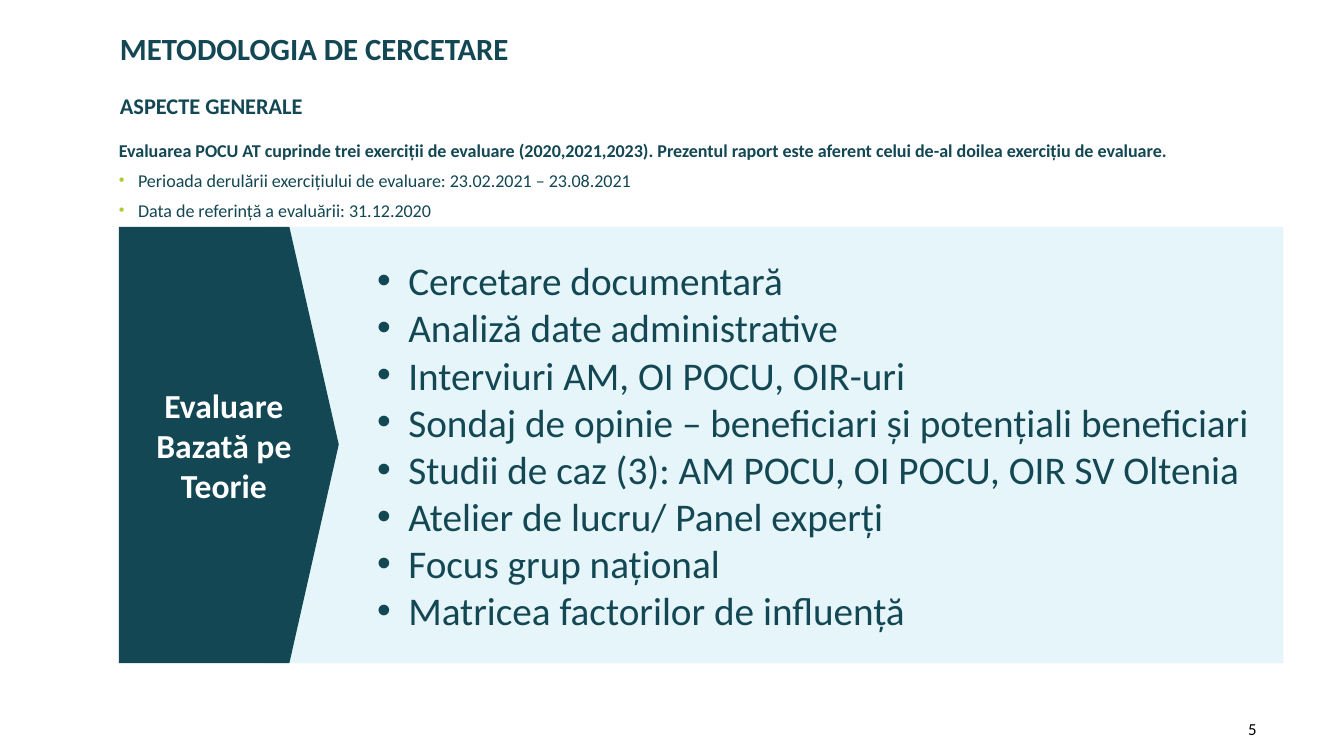
from lxml.etree import SubElement
from pptx import Presentation
from pptx.dml.color import RGBColor
from pptx.enum.shapes import MSO_SHAPE
from pptx.enum.text import MSO_ANCHOR, PP_ALIGN
from pptx.oxml.ns import qn
from pptx.util import Emu, Pt

PX = 9144  # EMU per px, 100 px to the inch
FONT = "Calibri"
TEAL = RGBColor(0x13, 0x47, 0x53)
LIME = RGBColor(0xAB, 0xCD, 0x3A)
PALE = RGBColor(0xDA, 0xF1, 0xF7)
WHITE = RGBColor(0xFF, 0xFF, 0xFF)
BLACK = RGBColor(0x00, 0x00, 0x00)

LEAD = ("Evaluarea POCU AT cuprinde trei exerciții de evaluare (2020,2021,2023). "
        "Prezentul raport este aferent celui de-al doilea exercițiu de evaluare.")
DATES = [
    "Perioada derulării exercițiului de evaluare: 23.02.2021 – 23.08.2021",
    "Data de referință a evaluării: 31.12.2020",
]
TOOLS = [
    "Cercetare documentară",
    "Analiză date administrative",
    "Interviuri AM, OI POCU, OIR-uri",
    "Sondaj de opinie – beneficiari și potențiali beneficiari",
    "Studii de caz (3): AM POCU, OI POCU, OIR SV Oltenia",
    "Atelier de lucru/ Panel experți",
    "Focus grup național",
    "Matricea factorilor de influență",
]


def px(n):
    return Emu(n * PX)


def set_frame(shape, pads, anchor=MSO_ANCHOR.TOP):
    frame = shape.text_frame
    frame.word_wrap = True
    frame.vertical_anchor = anchor
    (frame.margin_left, frame.margin_top,
     frame.margin_right, frame.margin_bottom) = map(px, pads)
    return frame


def add_box(slide, place, pads=(0, 0, 0, 0), anchor=MSO_ANCHOR.TOP):
    return set_frame(slide.shapes.add_textbox(*map(px, place)), pads, anchor)


def add_para(frame, first, align=PP_ALIGN.LEFT, gap=0):
    para = frame.paragraphs[0] if first else frame.add_paragraph()
    para.alignment = align
    para.space_before = Pt(0 if first else gap)
    para.space_after = Pt(gap)
    return para


def add_run(para, text, size, color=TEAL, bold=False):
    run = para.add_run()
    run.text = text
    font = run.font
    font.name, font.size, font.bold = FONT, Pt(size), bold
    font.color.rgb = color


def add_dot(para, left, hang, color=TEAL, scale=100):
    props = para._p.get_or_add_pPr()
    props.set("marL", str(px(left)))
    props.set("indent", str(px(-hang)))
    tint = SubElement(props, qn("a:buClr"))
    SubElement(tint, qn("a:srgbClr"), val=str(color))
    SubElement(props, qn("a:buSzPct"), val=str(scale * 1000))
    SubElement(props, qn("a:buFont"), typeface="Arial")
    SubElement(props, qn("a:buChar"), char="•")


def paint(shape, color, alpha=None):
    shape.shadow.inherit = False
    shape.line.fill.background()
    shape.fill.solid()
    shape.fill.fore_color.rgb = color
    if alpha:
        tint = shape.fill._xPr.find(qn("a:solidFill"))[0]
        SubElement(tint, qn("a:alpha"), val=str(alpha * 1000))


def add_heads(slide):
    title = add_para(add_box(slide, (119, 29, 1122, 63), (0, 5, 10, 5)), True)
    title.line_spacing = 0.9
    add_run(title, "METODOLOGIA DE CERCETARE", 22, bold=True)
    sub = add_para(add_box(slide, (119, 91, 413, 27)), True, gap=3)
    add_run(sub, "ASPECTE GENERALE", 16, bold=True)


def add_intro(slide):
    frame = add_box(slide, (118, 138, 1123, 87))
    add_run(add_para(frame, True, PP_ALIGN.JUSTIFY, 3), LEAD, 12.9, bold=True)
    for text in DATES:
        para = add_para(frame, False, PP_ALIGN.JUSTIFY, 3)
        add_dot(para, 19, 19, LIME, 90)
        add_run(para, text, 12.9)


def add_panel(slide):
    panel = slide.shapes.add_shape(MSO_SHAPE.RECTANGLE, *map(px, (265, 225, 1008, 433)))
    paint(panel, PALE, 70)
    frame = set_frame(panel, (0, 5, 10, 5), MSO_ANCHOR.MIDDLE)
    for i, text in enumerate(TOOLS):
        para = add_para(frame, i == 0)
        add_dot(para, 140, 31)
        add_run(para, text, 28)


def add_arrow(slide):
    left, neck, tip, top, base = 118, 287, 336, 225, 658
    build = slide.shapes.build_freeform(left, top, scale=PX)
    build.add_line_segments(
        [(neck, top), (tip, (top + base) // 2), (neck, base), (left, base)])
    arrow = build.convert_to_shape()
    paint(arrow, TEAL)
    frame = set_frame(arrow, (0, 5, 10, 5), MSO_ANCHOR.MIDDLE)
    add_run(add_para(frame, True, PP_ALIGN.CENTER),
            "Evaluare Bazată pe Teorie", 24, WHITE, True)


def add_page(slide):
    frame = add_box(slide, (1228, 703, 63, 40), (10, 5, 10, 5), MSO_ANCHOR.MIDDLE)
    add_run(add_para(frame, True), "5", 12, BLACK)


def main():
    deck = Presentation()
    deck.slide_width, deck.slide_height = px(1333), px(750)
    slide = deck.slides.add_slide(deck.slide_layouts[6])
    # Headings and intro
    add_heads(slide)
    add_intro(slide)
    # Method list with its arrow label
    add_panel(slide)
    add_arrow(slide)
    # Page number
    add_page(slide)
    deck.save("out.pptx")


if __name__ == "__main__":
    main()
